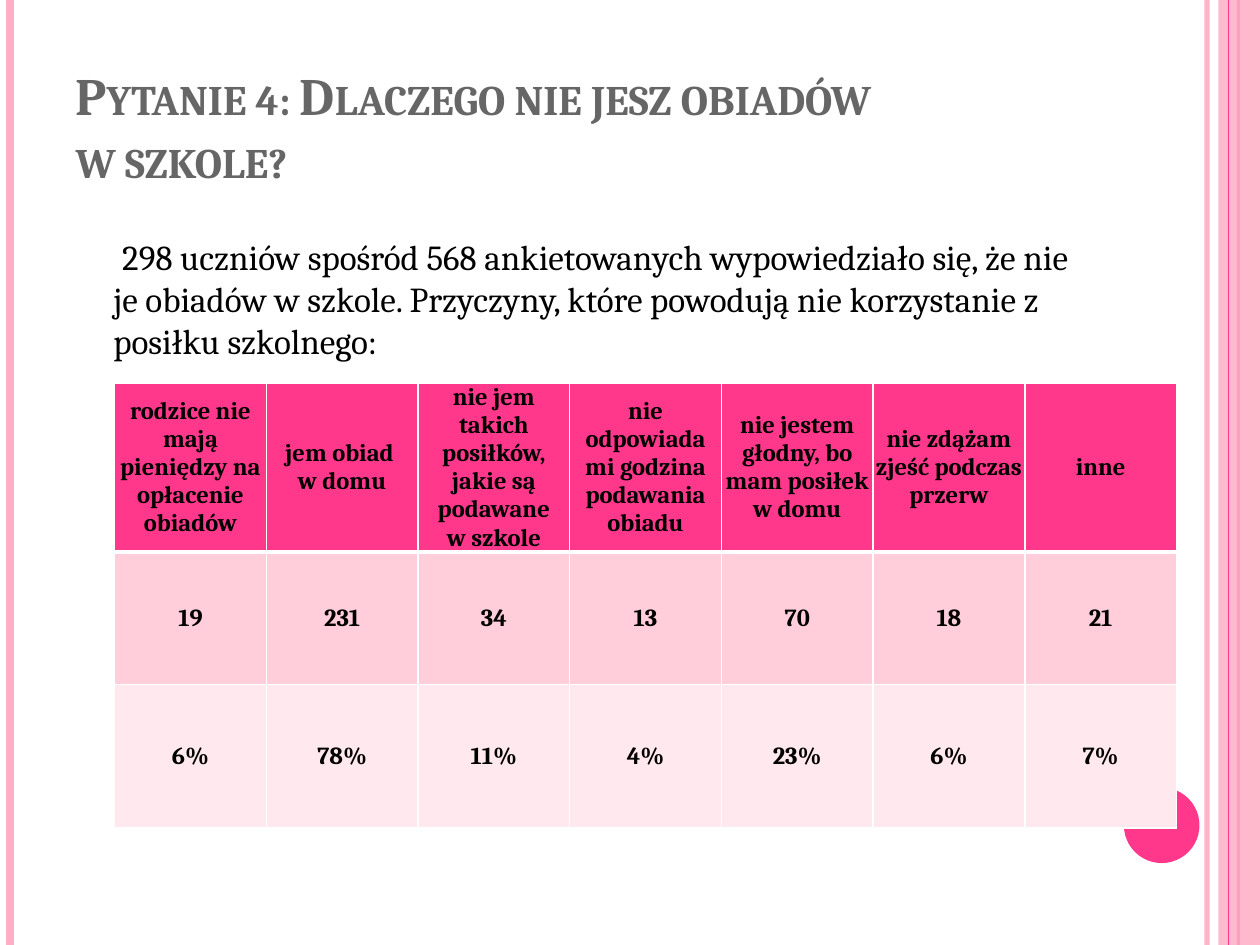
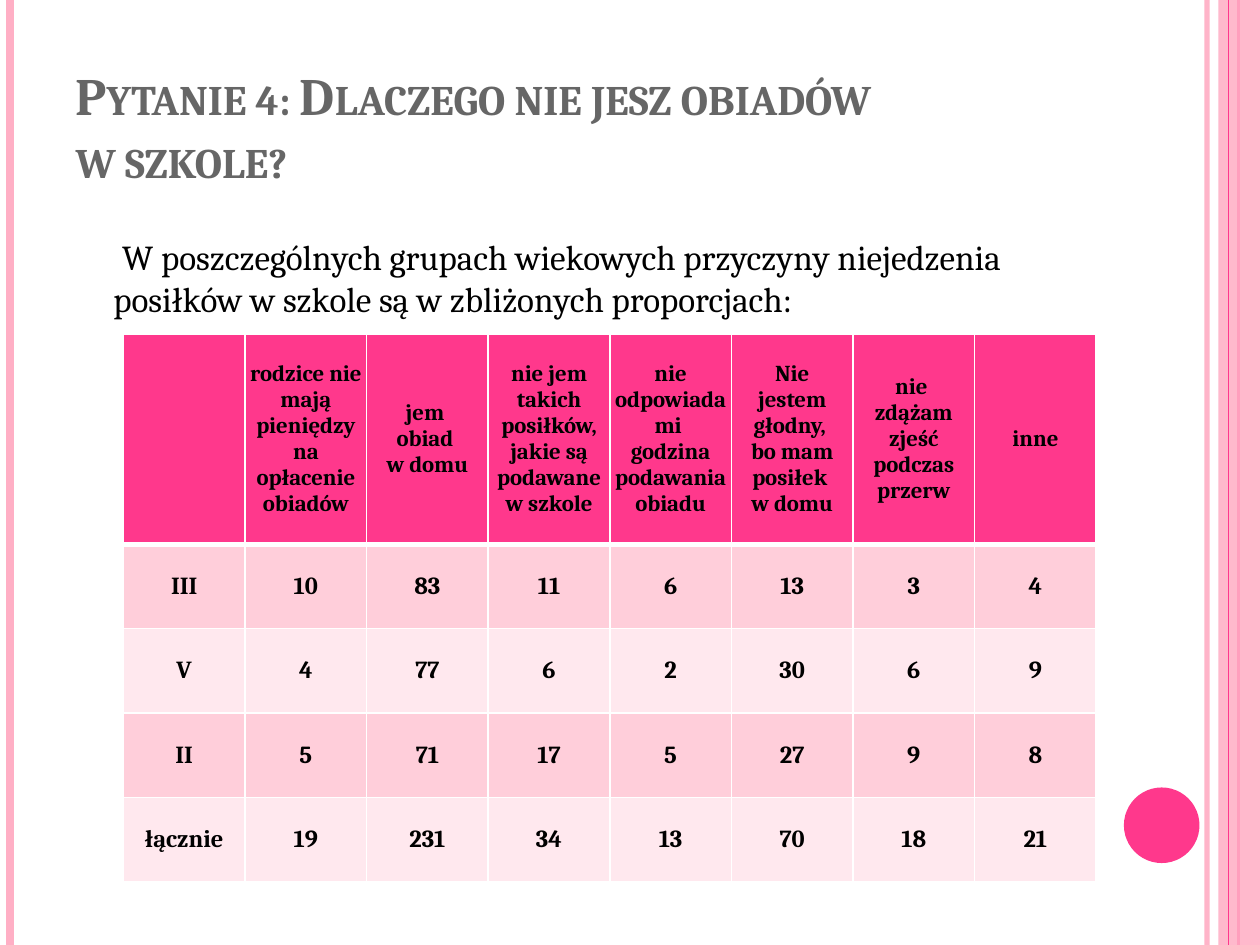
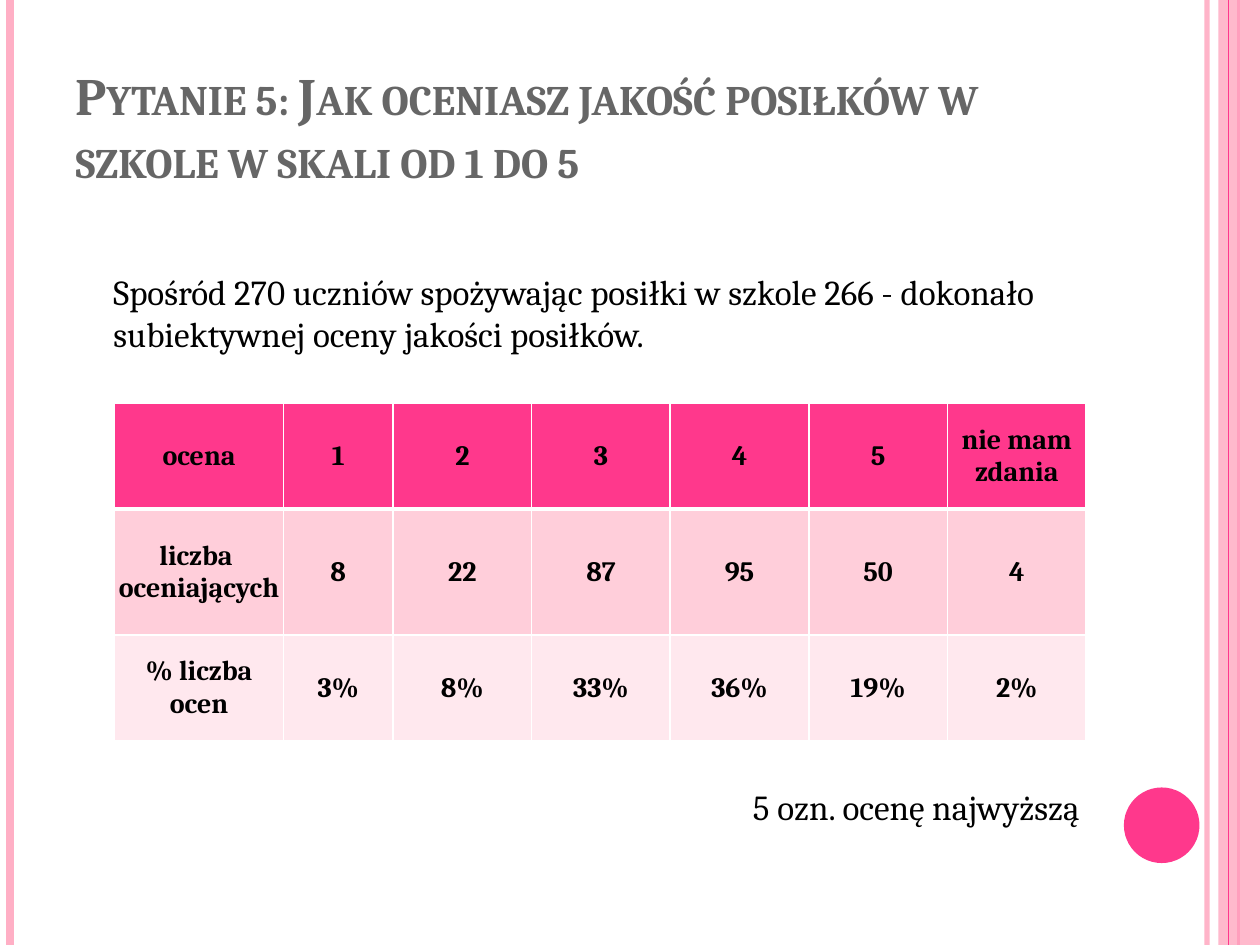
from lxml import etree
from pptx import Presentation
from pptx.dml.color import RGBColor
from pptx.enum.shapes import MSO_CONNECTOR, MSO_SHAPE
from pptx.enum.text import MSO_ANCHOR, MSO_AUTO_SIZE, PP_ALIGN
from pptx.oxml.ns import qn
from pptx.util import Inches, Pt

LEFT, CENTER, RIGHT = PP_ALIGN.LEFT, PP_ALIGN.CENTER, PP_ALIGN.RIGHT
WIDTH, HEIGHT = 10, 7.5
FONT = "Cambria"
PINK, LIGHT, WHITE, BLACK, GREY = "FF388C", "FFAFC5", "FFFFFF", "000000", "666666"
BANDS = ["FFCEDA", "FFE8EE"]

# Shared frame: vertical lines as (x, colour, width, opacity)
RULES = [(9.58, LIGHT, 3, 93), (0.08, LIGHT, 4.5, 100), (9.83, PINK, 1.5, 100)]
TOP_RULE = (9.75, PINK, 0.75, 100)
SIDE_BAND = (9.67, 0, 0.33, HEIGHT)
DOT = (8.92, 6.25, 0.6, 0.6)
TITLE_BOX = (0.5, 0.3, 8.17, 1.25)
BODY_LEFT, BODY_WIDTH, BODY_BOTTOM = 0.5, 8.17, 7.08

MEALS_TITLE = "Pytanie 4: Dlaczego nie jesz obiadów \vw szkole?"
TOTALS = ["19", "231", "34", "13", "70", "18", "21"]

SLIDES = [
    {
        "title": MEALS_TITLE,
        "body_top": 1.75, "inset": 0.12, "indent": 0.07,
        "body": [("298 uczniów spośród 568 ankietowanych wypowiedziało się, że nie je obiadów "
                  "w szkole. Przyczyny, które powodują nie korzystanie z posiłku szkolnego:",
                  LEFT, 6)],
        "place": (0.91, 3.04), "columns": [8.43 / 7] * 7, "rows": [1.24, 1.05, 1.14],
        "sizes": (14, 14),
        "cells": [
            ["rodzice nie mają pieniędzy na opłacenie obiadów", "jem obiad \vw domu",
             "nie jem takich posiłków, jakie są podawane\vw szkole",
             "nie odpowiada mi godzina podawania obiadu",
             "nie jestem głodny, bo mam posiłek w domu",
             "nie zdążam zjeść podczas przerw", "inne"],
            TOTALS,
            ["6%", "78%", "11%", "4%", "23%", "6%", "7%"],
        ],
    },
    {
        "title": MEALS_TITLE,
        "body_top": 1.75, "inset": 0.12, "indent": 0.07,
        "body": [("W poszczególnych grupach wiekowych przyczyny niejedzenia posiłków "
                  "w szkole są w zbliżonych proporcjach:", LEFT, 6)],
        "place": (0.98, 2.65), "columns": [7.72 / 8] * 8, "rows": [1.67] + [0.67] * 4,
        "sizes": (13, 14),
        "cells": [
            ["", "rodzice nie mają pieniędzy na opłacenie obiadów",
             "jem \vobiad \vw domu", "nie jem takich posiłków, jakie są podawane w szkole",
             "nie odpowiada mi \vgodzina podawania obiadu",
             "Nie\vjestem głodny, \vbo mam posiłek \vw domu",
             "nie \vzdążam zjeść podczas przerw", "inne"],
            ["III", "10", "83", "11", "6", "13", "3", "4"],
            ["V", "4", "77", "6", "2", "30", "6", "9"],
            ["II", "5", "71", "17", "5", "27", "9", "8"],
            ["łącznie"] + TOTALS,
        ],
    },
    {
        "title": "Pytanie 5: Jak oceniasz jakość posiłków w szkole w skali od 1 do 5",
        "body_top": 2.1, "inset": 0.05, "indent": 0,
        "body": [("Spośród 270 uczniów spożywając posiłki w szkole 266 - dokonało "
                  "subiektywnej oceny jakości posiłków.", LEFT, 6),
                 ("5 ozn. ocenę najwyższą", RIGHT, 246)],
        "place": (0.91, 3.2), "columns": [1.34, 0.87] + [1.1] * 5, "rows": [0.84, 1, 0.84],
        "sizes": (16, 16),
        "cells": [
            ["ocena", "1", "2", "3", "4", "5", "nie mam zdania"],
            ["liczba \voceniających", "8", "22", "87", "95", "50", "4"],
            ["% liczba ocen", "3%", "8%", "33%", "36%", "19%", "2%"],
        ],
    },
]


def color(value):
    return RGBColor.from_string(value)


def add_child(parent, tag, **attributes):
    return etree.SubElement(parent, qn(tag), attributes)


def paint(fill, value, opacity=100):
    fill.solid()
    fill.fore_color.rgb = color(value)
    return opacity


def set_opacity(shape, opacity):
    if opacity < 100:
        for tint in shape.element.iter(qn("a:srgbClr")):
            add_child(tint, "a:alpha", val=str(opacity * 1000))


def place(shape, box):
    shape.left, shape.top, shape.width, shape.height = map(Inches, box)


def style_runs(paragraph, size, value, bold=False):
    for span in paragraph.runs:
        span.font.name, span.font.size, span.font.bold = FONT, Pt(size), bold
        span.font.color.rgb = color(value)


# Shared frame, drawn once and kept on the master
def add_rule(page, x, value, width, opacity):
    rule = page.shapes.add_connector(MSO_CONNECTOR.STRAIGHT, Inches(x), 0,
                                     Inches(x), Inches(HEIGHT))
    rule.line.color.rgb = color(value)
    rule.line.width = Pt(width)
    set_opacity(rule, opacity)
    add_child(rule.element.spPr, "a:effectLst")
    return rule


def add_block(page, kind, box, value, opacity=100):
    block = page.shapes.add_shape(kind, *map(Inches, box))
    block.shadow.inherit = False
    paint(block.fill, value)
    block.line.fill.background()
    set_opacity(block, opacity)
    return block


def move_frame_to_master(page, master):
    parts = [add_rule(page, *rule) for rule in RULES]
    parts += [add_block(page, MSO_SHAPE.RECTANGLE, SIDE_BAND, LIGHT, 87),
              add_rule(page, *TOP_RULE),
              add_block(page, MSO_SHAPE.OVAL, DOT, PINK)]
    for number, part in enumerate(parts, 101):
        part.element.xpath("./*/p:cNvPr")[0].set("id", str(number))
        master.shapes.element.append(part.element)


# Title and introduction
def fill_title(title, text):
    place(title, TITLE_BOX)
    frame = title.text_frame
    frame.text = text
    frame.auto_size = MSO_AUTO_SIZE.NONE
    frame.vertical_anchor = MSO_ANCHOR.BOTTOM
    paragraph = frame.paragraphs[0]
    paragraph.alignment = LEFT
    style_runs(paragraph, 30, GREY, bold=True)
    for span in paragraph.runs:
        span.font._element.set("cap", "small")


def fill_body(body, content):
    top = content["body_top"]
    place(body, (BODY_LEFT, top, BODY_WIDTH, BODY_BOTTOM - top))
    frame = body.text_frame
    frame.auto_size = MSO_AUTO_SIZE.NONE
    frame.margin_top = Inches(content["inset"])
    frame.text = "\n".join(text for text, _, _ in content["body"])
    for paragraph, (_, alignment, gap) in zip(frame.paragraphs, content["body"]):
        paragraph.alignment = alignment
        paragraph.space_before = Pt(gap)
        style_runs(paragraph, 20, BLACK)
        properties = paragraph._p.get_or_add_pPr()
        properties.set("marL", str(Inches(0.3)))
        properties.set("indent", str(Inches(content["indent"])))
        add_child(properties, "a:buNone")


# Survey table
def set_borders(cell, row):
    widths = {"a:lnL": 1, "a:lnR": 1, "a:lnT": 3 if row == 1 else 1,
              "a:lnB": 3 if row == 0 else 1}
    for tag, width in widths.items():
        line = add_child(cell._tc.get_or_add_tcPr(), tag, w=str(Pt(width)))
        add_child(add_child(line, "a:solidFill"), "a:srgbClr", val=WHITE)


def add_survey_table(page, content):
    columns, rows = content["columns"], content["rows"]
    box = (*content["place"], sum(columns), sum(rows))
    table = page.shapes.add_table(len(rows), len(columns), *map(Inches, box)).table
    table.horz_banding = False
    for column, width in zip(table.columns, columns):
        column.width = Inches(width)
    for index, height in enumerate(rows):
        table.rows[index].height = Inches(height)
        for cell, text in zip(table.rows[index].cells, content["cells"][index]):
            cell.text = text
            cell.vertical_anchor = MSO_ANCHOR.MIDDLE
            cell.margin_left = cell.margin_right = cell.margin_top = cell.margin_bottom = 0
            set_borders(cell, index)
            paint(cell.fill, BANDS[(index - 1) % 2] if index else PINK)
            paragraph = cell.text_frame.paragraphs[0]
            paragraph.alignment = CENTER
            style_runs(paragraph, content["sizes"][min(index, 1)], BLACK, bold=True)


def main():
    deck = Presentation()
    deck.slide_width, deck.slide_height = Inches(WIDTH), Inches(HEIGHT)
    paint(deck.slide_master.background.fill, WHITE)
    for content in SLIDES:
        page = deck.slides.add_slide(deck.slide_layouts[1])
        fill_title(page.shapes.title, content["title"])
        fill_body(page.placeholders[1], content)
        add_survey_table(page, content)
    move_frame_to_master(deck.slides[0], deck.slide_master)
    deck.save("out.pptx")


if __name__ == "__main__":
    main()
